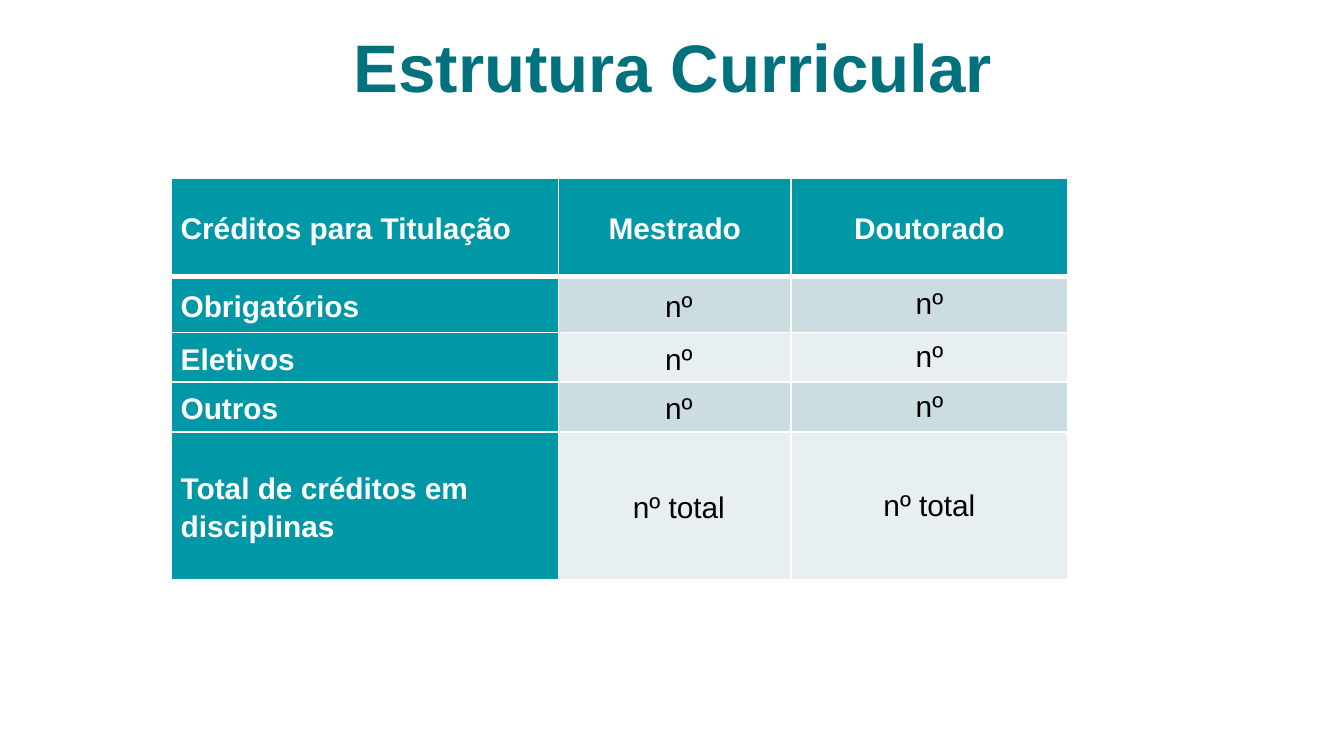
from typing import NamedTuple

from lxml.etree import SubElement
from pptx import Presentation
from pptx.dml.color import RGBColor
from pptx.enum.text import MSO_ANCHOR as Anchor, PP_ALIGN as Align
from pptx.oxml.ns import qn
from pptx.util import Pt

TEAL = RGBColor(0x00, 0x71, 0x7D)
HEAD = RGBColor(0x00, 0x97, 0xA7)
DARK = RGBColor(0xCC, 0xDD, 0xE1)
PALE = RGBColor(0xE7, 0xEF, 0xF1)
WHITE = RGBColor(0xFF, 0xFF, 0xFF)
BLACK = RGBColor(0x00, 0x00, 0x00)


class Style(NamedTuple):
    size: float
    color: RGBColor
    bold: bool
    align: Align
    space: float = 1.0


class Row(NamedTuple):
    height: float
    texts: tuple[str, str, str]


WIDTHS = (207.4, 124.6, 148.3)
ROWS = (
    Row(52.6, ("Créditos para Titulação", "Mestrado", "Doutorado")),
    Row(30.2, ("Obrigatórios", "nº", "nº")),
    Row(26.6, ("Eletivos", "nº", "nº")),
    Row(26.6, ("Outros", "nº", "nº")),
    Row(79.2, ("Total de créditos em disciplinas", "nº total", "nº total")),
)


def put(frame, text: str, style: Style) -> None:
    para = frame.paragraphs[0]
    para.text = text
    para.alignment = style.align
    para.line_spacing = style.space
    font = para.runs[0].font
    font.color.rgb = style.color
    form = {"name": "Arial", "size": Pt(style.size), "bold": style.bold}
    for key, val in form.items():
        setattr(font, key, val)


def edge(cell, side: str, width: float) -> None:
    line = SubElement(cell._tc.get_or_add_tcPr(), qn(f"a:{side}"), w=str(Pt(width)))
    fill = SubElement(line, qn("a:solidFill"))
    SubElement(fill, qn("a:srgbClr"), val=str(WHITE))


def draw_cell(cell, row: int, col: int, text: str) -> None:
    head = row == 0 or col == 0
    # Numbers in the middle column sit slightly right of center
    left = 9.4 if row and col == 1 else 5
    form = {"margin_left": Pt(left), "margin_right": Pt(5), "margin_top": 0,
            "margin_bottom": 0, "vertical_anchor": Anchor.MIDDLE}
    for key, val in form.items():
        setattr(cell, key, val)
    for side in ("lnL", "lnR", "lnT", "lnB"):
        thick = (row == 0 and side == "lnB") or (row == 1 and side == "lnT")
        edge(cell, side, 3 if thick else 1)
    cell.fill.solid()
    cell.fill.fore_color.rgb = HEAD if head else DARK if row % 2 else PALE
    put(cell.text_frame, text, Style(
        16, WHITE if head else BLACK, head,
        Align.CENTER if col else Align.LEFT,
        1.0 if row and col == 2 else 1.15))


def draw_title(slide, text: str) -> None:
    frame = slide.shapes.add_textbox(Pt(21), Pt(22.3), Pt(679), Pt(41.8)).text_frame
    form = {"word_wrap": True, "vertical_anchor": Anchor.BOTTOM}
    form |= {f"margin_{side}": Pt(7.2) for side in ("left", "right", "top", "bottom")}
    for key, val in form.items():
        setattr(frame, key, val)
    put(frame, text, Style(36, TEAL, True, Align.CENTER))


def draw_table(slide) -> None:
    high = sum(row.height for row in ROWS)
    table = slide.shapes.add_table(len(ROWS), len(WIDTHS), Pt(91.8), Pt(95.4),
                                   Pt(sum(WIDTHS)), Pt(high)).table
    for col, width in zip(table.columns, WIDTHS):
        col.width = Pt(width)
    for r, row in enumerate(ROWS):
        table.rows[r].height = Pt(row.height)
        for c, text in enumerate(row.texts):
            draw_cell(table.cell(r, c), r, c, text)


def main() -> None:
    deck = Presentation()
    deck.slide_width, deck.slide_height = Pt(720), Pt(405)
    slide = deck.slides.add_slide(deck.slide_layouts[6])
    # Heading
    draw_title(slide, "Estrutura Curricular")
    # Credits by degree
    draw_table(slide)
    deck.save("out.pptx")


if __name__ == "__main__":
    main()
